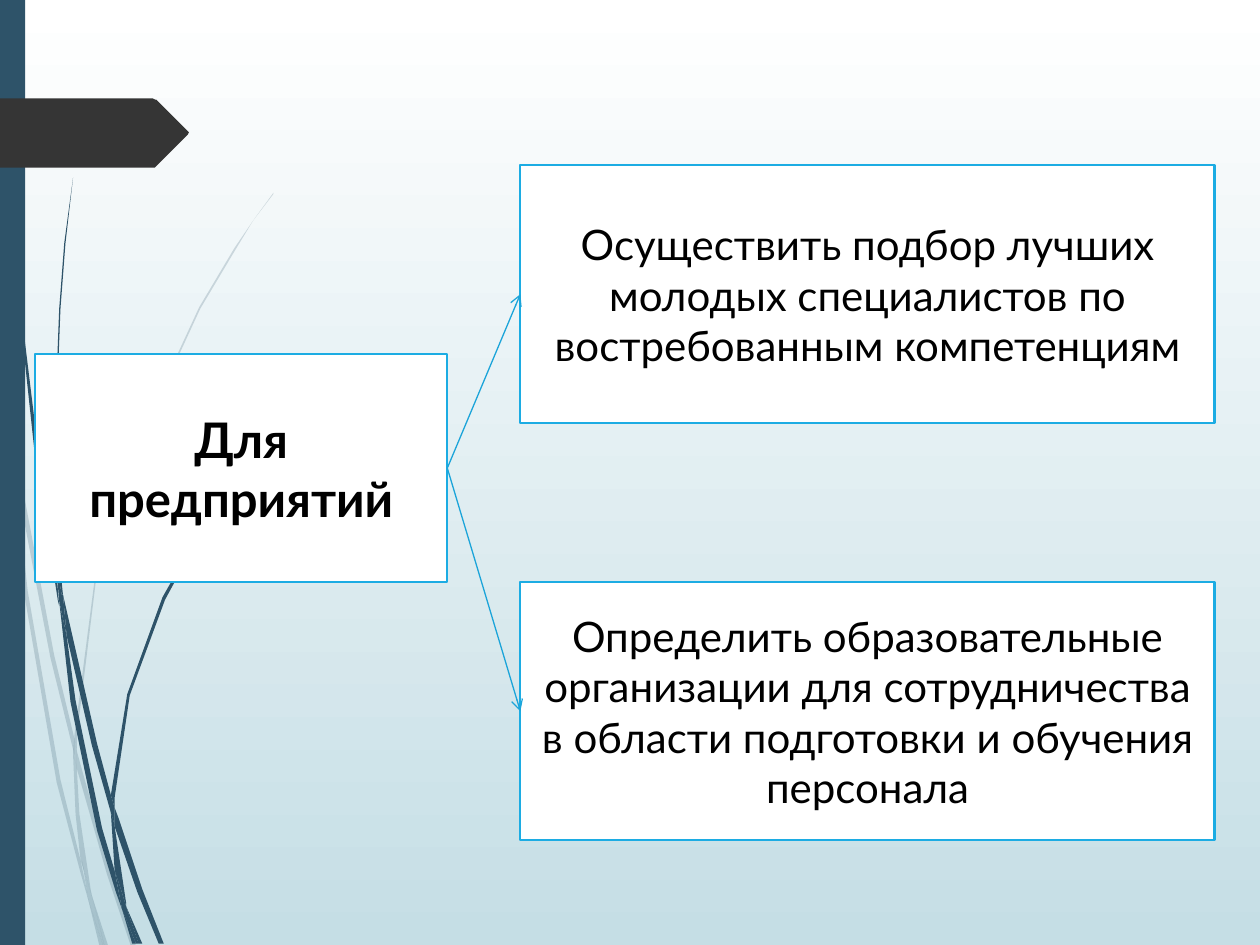
from lxml import etree
from pptx import Presentation
from pptx import util as u
from pptx.dml import color
from pptx.enum import shapes, text
from pptx.oxml import ns

WIDTH, HEIGHT = 10, 7.5
NAVY, CHARCOAL, WHITE, BLACK = "2E5369", "353535", "FFFFFF", "000000"
BORDER, ARROW = "1CACE3", "1BA4D9"

# Two columns: audience on the left, its goals on the right
AUDIENCE_X, AUDIENCE_W = 0.28, 3.27
GOAL_X, GOAL_W = 4.13, 5.51
AUDIENCE_Y, AUDIENCE_H = 2.81, 1.81
GOAL_Y, GOAL_H, GOAL_STEP = 1.31, 2.05, 3.31

AUDIENCE = "Для предприятий"
GOALS = [
    "Осуществить подбор лучших молодых специалистов по востребованным компетенциям",
    "Определить образовательные организации для сотрудничества "
    "в области подготовки и обучения персонала",
]
AUDIENCE_FONT = {"name": "Lato", "size": u.Pt(28), "bold": True}
GOAL_FONT = {"name": "Lato", "size": u.Pt(24), "bold": False}

# Outlines of the grass blades, in hundredths of an inch
PALE_BLADES = [
    [(8, 350), (6, 322), (0, 282), (0, 299), (7, 344)],
    [(40, 522), (59, 599), (59, 586), (43, 520), (10, 345), (12, 376)],
    [(64, 607), (61, 596), (61, 610), (85, 694), (104, 751), (108, 751), (88, 692)],
    [(83, 751), (86, 751), (73, 711)],
    [(64, 683), (48, 619), (22, 469), (12, 376), (8, 350), (19, 470),
     (45, 621), (64, 693), (70, 714), (69, 707)],
    [(58, 599), (60, 646), (64, 683), (67, 692), (73, 711), (72, 706),
     (63, 646), (61, 610), (61, 608)],
    [(61, 584), (76, 462), (111, 349), (159, 245), (187, 198), (201, 175),
     (217, 154), (217, 153), (201, 175), (186, 197), (158, 244), (110, 348),
     (75, 461), (59, 584), (59, 586), (61, 596)],
    [(70, 714), (79, 751), (82, 751)],
    [(61, 608), (61, 610), (61, 596), (59, 586), (58, 599)],
    [(67, 692), (65, 683), (69, 707), (70, 714), (82, 751), (83, 751), (73, 711)],
]
DARK_BLADES = [
    [(5, 110), (14, 233), (27, 355), (46, 477), (47, 481), (45, 457), (45, 453),
     (30, 355), (15, 232), (6, 109), (4, 48), (3, 0), (2, 0), (3, 48)],
    [(73, 592), (88, 645), (88, 633), (88, 631), (77, 590), (50, 472), (53, 505)],
    [(94, 649), (91, 641), (91, 656), (109, 708), (126, 749), (130, 749), (113, 706)],
    [(91, 691), (81, 657), (60, 556), (53, 505), (47, 477), (56, 557), (77, 659),
     (92, 708), (97, 722), (96, 717)],
    [(50, 472), (48, 453), (44, 349), (48, 245), (52, 193), (58, 141),
     (51, 193), (47, 245), (43, 349), (45, 449), (49, 472)],
    [(110, 749), (113, 749), (100, 719)],
    [(47, 477), (53, 505), (50, 472), (49, 472), (45, 449), (45, 453)],
    [(91, 633), (103, 552), (131, 476), (169, 406), (191, 374), (203, 359),
     (216, 344), (215, 344), (203, 358), (191, 373), (168, 405), (129, 474),
     (101, 551), (88, 631), (91, 641)],
    [(97, 722), (105, 749), (108, 749)],
    [(88, 645), (91, 691), (96, 706), (100, 719), (100, 716), (91, 656), (90, 651)],
    [(88, 645), (90, 651), (91, 656), (91, 641), (88, 631), (88, 633)],
    [(96, 706), (91, 691), (96, 717), (97, 722), (108, 749), (110, 749), (100, 719)],
]
PAGE_TAG = [(0, 78), (121, 78), (123, 79), (124, 79), (149, 104), (150, 105),
            (149, 107), (124, 132), (123, 133), (121, 133), (0, 133)]


def rgb(hex_code):
    return color.RGBColor.from_string(hex_code)


def set_all(target, values):
    for key, value in values.items():
        setattr(target, key, value)


def paint(shape, fill, border=None):
    shape.shadow.inherit = False
    shape.fill.solid()
    shape.fill.fore_color.rgb = rgb(fill)
    if border:
        shape.line.color.rgb = rgb(border)
        shape.line.width = u.Pt(1.25)
    else:
        shape.line.fill.background()


def add_outline(parent, points, fill, opacity=100):
    builder = parent.build_freeform(*points[0], scale=u.Inches(0.01))
    builder.add_line_segments(points[1:], close=True)
    outline = builder.convert_to_shape()
    paint(outline, fill)
    if opacity < 100:
        tint = outline.fill._xPr.find(".//" + ns.qn("a:srgbClr"))
        etree.SubElement(tint, ns.qn("a:alpha"), val=str(opacity * 1000))


def add_blades(slide, blades, opacity=100):
    clump = slide.shapes.add_group_shape()
    for blade in blades:
        add_outline(clump.shapes, blade, NAVY, opacity)


def add_rect(slide, x, y, w, h, fill, border=None):
    rect = slide.shapes.add_shape(
        shapes.MSO_SHAPE.RECTANGLE, *(u.Inches(n) for n in (x, y, w, h)))
    paint(rect, fill, border)
    return rect


def add_card(slide, x, y, w, h, wording, font):
    card = add_rect(slide, x, y, w, h, WHITE, BORDER)
    set_all(card.text_frame, {"word_wrap": True,
                              "vertical_anchor": text.MSO_ANCHOR.MIDDLE})
    paragraph = card.text_frame.paragraphs[0]
    paragraph.alignment = text.PP_ALIGN.CENTER
    run = paragraph.add_run()
    run.text = wording
    set_all(run.font, font)
    run.font.color.rgb = rgb(BLACK)
    return card


def add_arrow(slide, source, target):
    arrow = slide.shapes.add_connector(shapes.MSO_CONNECTOR.STRAIGHT, 0, 0, 0, 0)
    arrow.begin_connect(source, 3)  # right side
    arrow.end_connect(target, 1)  # left side
    arrow.line.color.rgb = rgb(ARROW)
    arrow.line.width = u.Pt(0.75)
    etree.SubElement(arrow.line._get_or_add_ln(), ns.qn("a:tailEnd"), type="arrow")
    etree.SubElement(arrow._element.spPr, ns.qn("a:effectLst"))


def set_background(slide, top, bottom):
    fill = slide.background.fill
    fill.gradient()
    fill.gradient_angle = 270
    for stop, shade in zip(fill.gradient_stops, (top, bottom)):
        stop.color.rgb = rgb(shade)


def main():
    deck = Presentation()
    set_all(deck, {"slide_width": u.Inches(WIDTH), "slide_height": u.Inches(HEIGHT)})
    slide = deck.slides.add_slide(deck.slide_layouts[6])

    # Backdrop: gradient, grass, side band and page tag
    set_background(slide, WHITE, "C5DEE5")
    add_blades(slide, PALE_BLADES, opacity=20)
    add_blades(slide, DARK_BLADES)
    add_rect(slide, 0, 0, WIDTH * 0.02, HEIGHT, NAVY)
    add_outline(slide.shapes, PAGE_TAG, CHARCOAL)

    # Audience and its goals
    audience = add_card(slide, AUDIENCE_X, AUDIENCE_Y, AUDIENCE_W, AUDIENCE_H,
                        AUDIENCE, AUDIENCE_FONT)
    goals = [add_card(slide, GOAL_X, GOAL_Y + row * GOAL_STEP, GOAL_W, GOAL_H,
                      goal, GOAL_FONT)
             for row, goal in enumerate(GOALS)]
    for goal in goals:
        add_arrow(slide, audience, goal)

    deck.save("out.pptx")


if __name__ == "__main__":
    main()
